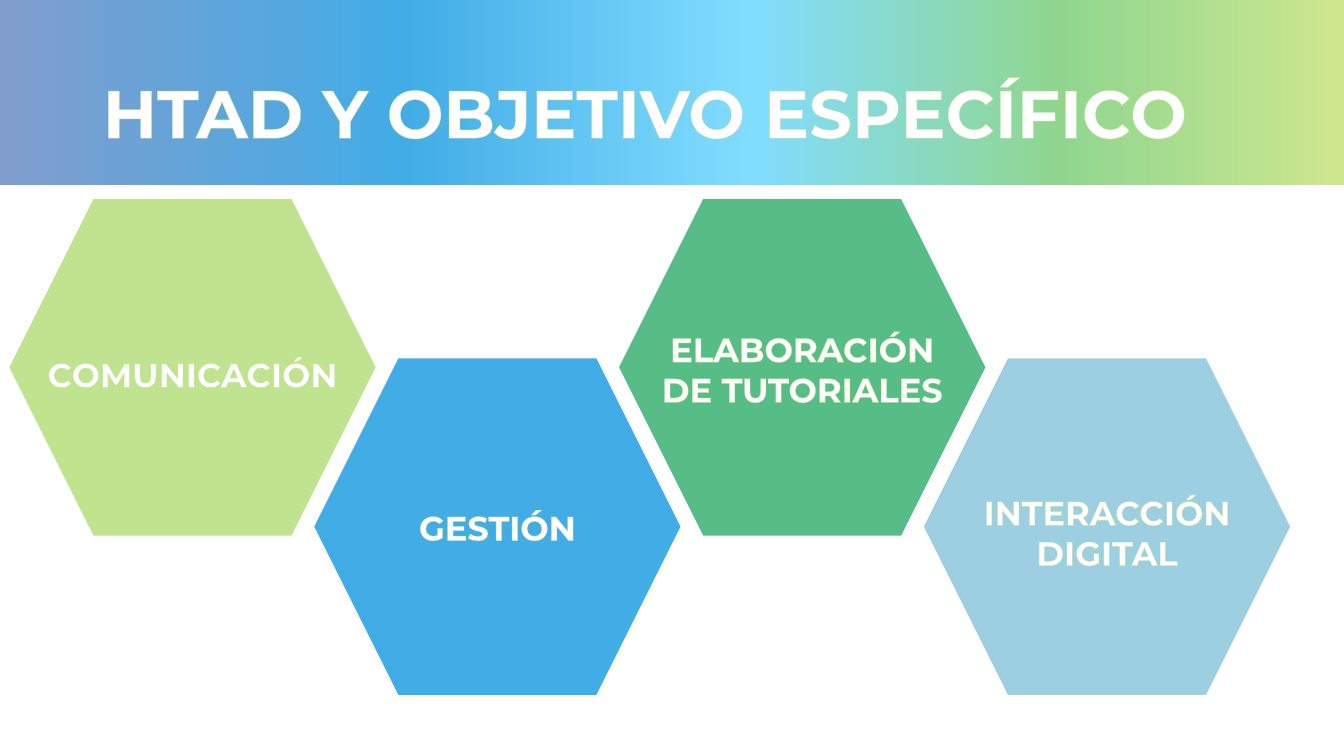
from lxml import etree
from pptx import Presentation
from pptx.dml.color import RGBColor
from pptx.enum.shapes import MSO_SHAPE as Shape
from pptx.enum.text import MSO_ANCHOR as Anchor, MSO_AUTO_SIZE as Fit, PP_ALIGN as Align
from pptx.oxml.ns import qn
from pptx.util import Inches, Pt

FONT = "Montserrat"
WHITE, LIME = "FFFFFF", "BFE38F"
STOPS = [(0, "819DCD"), (30, "42ACE6"), (56, "81DDFF"), (79, "90D68F"), (100, "CFE78F")]
# Text, fill, label top, label height
TOOLS = [
    ("COMUNICACIÓN", LIME, 3.46, 0.5),
    ("GESTIÓN", "42ACE6", 4.98, 0.5),
    ("ELABORACIÓN DE TUTORIALES", "57BD87", 3.21, 0.91),
    ("INTERACCIÓN DIGITAL", "9DCFE2", 4.83, 0.91),
]


def color(code):
    return RGBColor.from_string(code)


def place(shape, box):
    shape.left, shape.top, shape.width, shape.height = map(Inches, box)


def write(shape, text, size, align, anchor=Anchor.TOP, fit=Fit.NONE, space=None):
    frame = shape.text_frame
    frame.word_wrap = True
    frame.auto_size = fit
    frame.vertical_anchor = anchor
    para = frame.paragraphs[0]
    para.alignment = align
    para.line_spacing = space
    run = para.add_run()
    run.text = text
    font = run.font
    font.name, font.size, font.bold = FONT, Pt(size), True
    font.color.rgb = color(WHITE)
    # Thin outline around the letters
    line = etree.Element(qn("a:ln"), w=str(Pt(0.75)))
    fill = etree.SubElement(line, qn("a:solidFill"))
    etree.SubElement(fill, qn("a:srgbClr"), val=LIME)
    font._element.insert(0, line)


def header(slide, box):
    left, top, width, height = box
    # Gradient band, behind the title
    band = slide.shapes.add_shape(Shape.RECTANGLE, *map(Inches, box))
    band.shadow.inherit = False
    band.line.fill.background()
    band.fill.gradient()
    band.fill.gradient_angle = 0
    stops = band._element.spPr.find(".//" + qn("a:gsLst"))
    for old in list(stops):
        stops.remove(old)
    for pos, code in STOPS:
        stop = etree.SubElement(stops, qn("a:gs"), pos=str(pos * 1000))
        etree.SubElement(stop, qn("a:srgbClr"), val=code)
    slide.shapes._spTree.insert(2, band._element)
    # Title
    title = slide.shapes.title
    place(title, (left + 0.92, top + 0.4, width - 1.83, 1.67))
    write(title, "HTAD Y OBJETIVO ESPECÍFICO", 48, Align.LEFT, Anchor.MIDDLE, space=0.9)


def comb(slide, box):
    left, top, width, height = box
    side, tall = 3.4, 3.13
    step = (width - side) / (len(TOOLS) - 1)
    # Hexagons, every second one lower
    for i, (text, code, y, high) in enumerate(TOOLS):
        x = left + i * step
        drop = (height - tall) * (i % 2)
        cell = slide.shapes.add_shape(
            Shape.HEXAGON, *map(Inches, (x, top + drop, side, tall)))
        cell.shadow.inherit = False
        cell.fill.solid()
        cell.fill.fore_color.rgb = color(code)
        cell.line.color.rgb = color(code)
        cell.line.width = Pt(15)
        edge = cell._element.spPr.find(qn("a:ln"))
        etree.SubElement(edge, qn("a:miter"), lim="800000")
    # Labels, above all hexagons
    for i, (text, code, y, high) in enumerate(TOOLS):
        label = slide.shapes.add_textbox(
            *map(Inches, (left + i * step, y, side, high)))
        write(label, text, 24, Align.CENTER, fit=Fit.SHAPE_TO_FIT_TEXT)


def main():
    deck = Presentation()
    deck.slide_width, deck.slide_height = Inches(13.33), Inches(7.5)
    slide = deck.slides.add_slide(deck.slide_layouts[5])
    slide.background.fill.solid()
    slide.background.fill.fore_color.rgb = color(WHITE)
    header(slide, (0, -0.08, 13.33, 1.92))
    comb(slide, (0.21, 2.08, 12.47, 4.71))
    deck.save("out.pptx")


if __name__ == "__main__":
    main()
